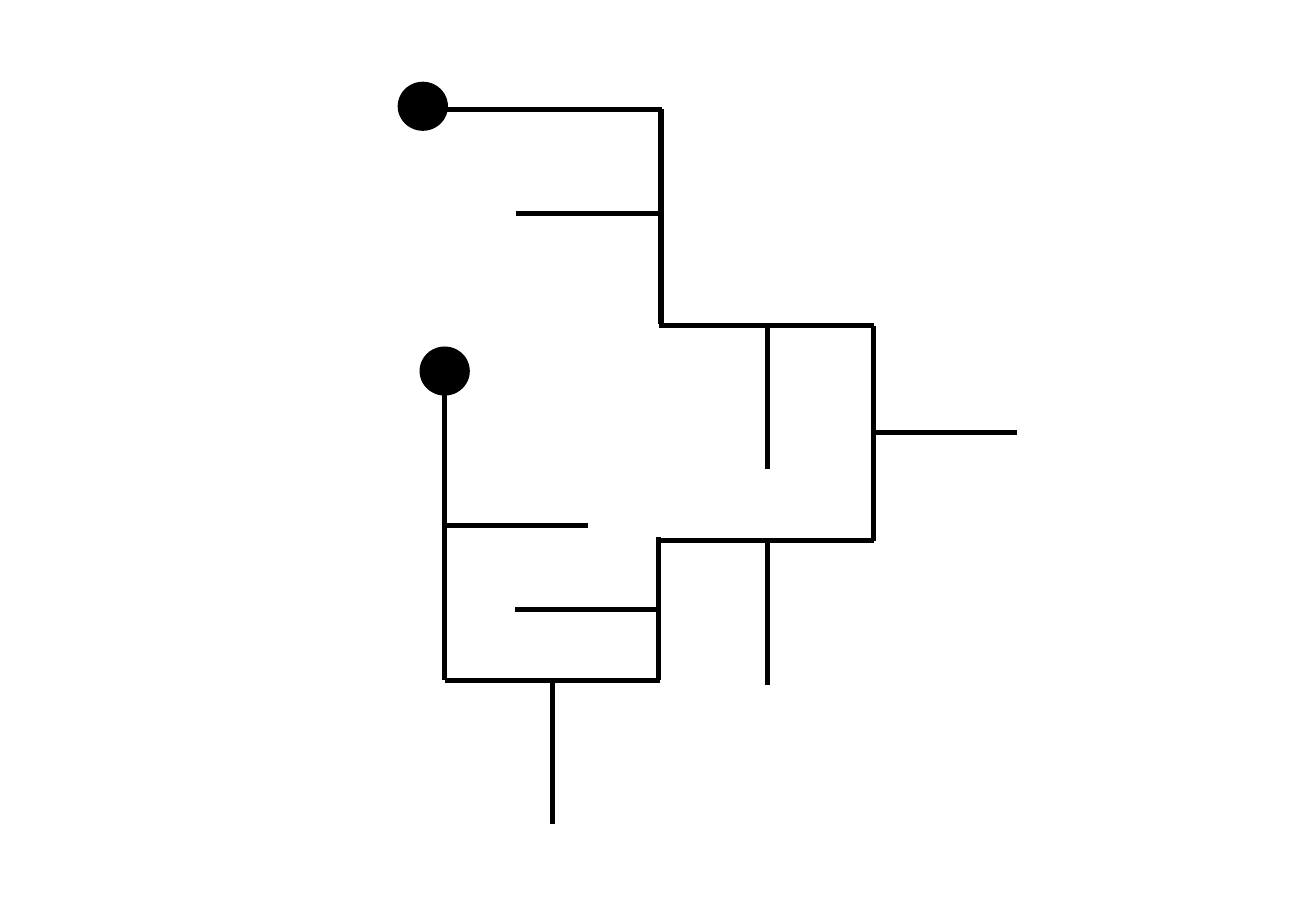
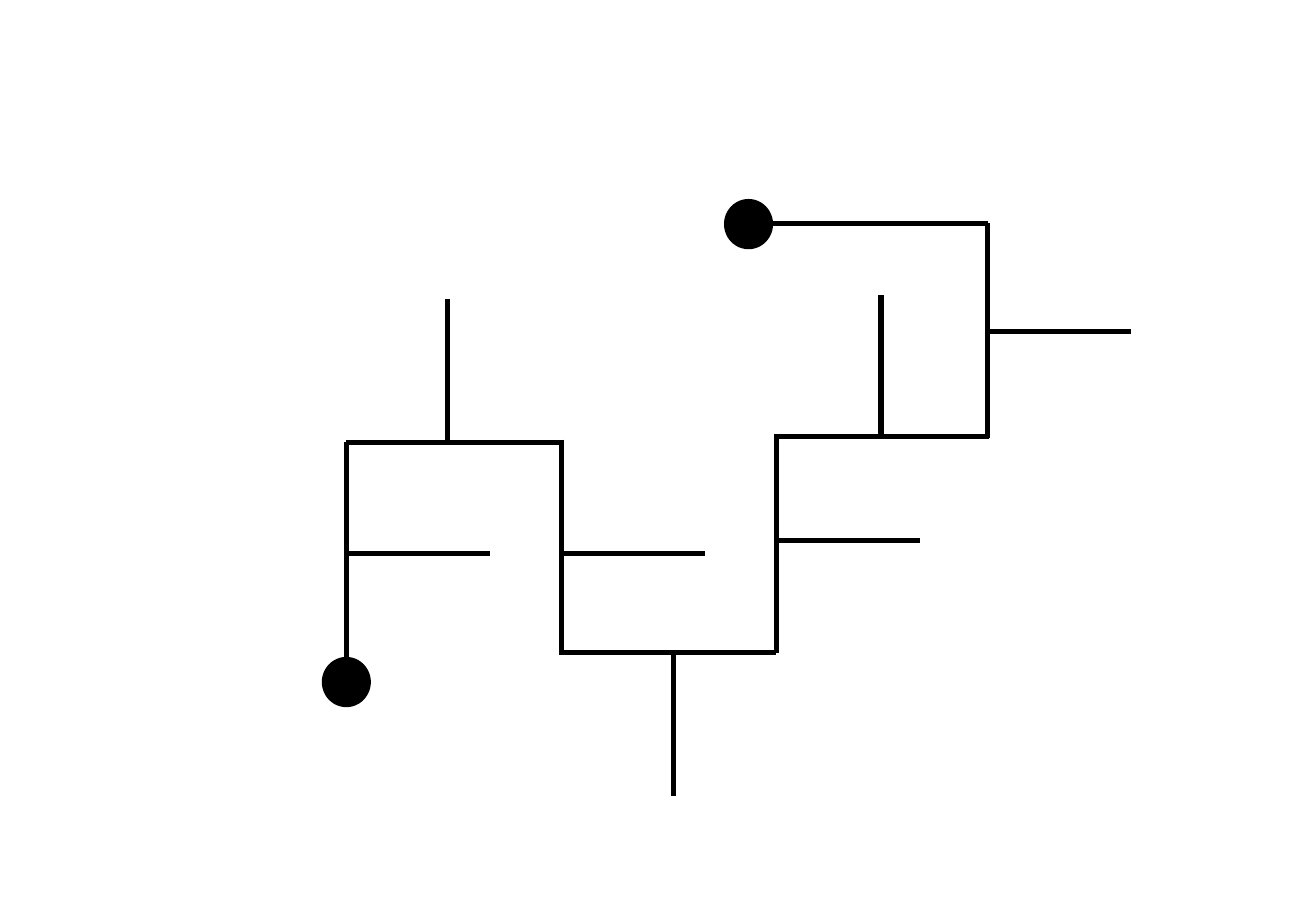
"""Build two slides of branching line figures that end in round dots."""
import pptx
import pptx.dml.color
import pptx.enum.shapes
import pptx.oxml
import pptx.util

Inches = pptx.util.Inches
BLACK = "000000"
DOT = (0.4, 0.39)
STUB = 1.18
WALL = 1.5 * STUB
LONG = 2 * STUB

FIGURES = [
    {
        "turn": 0,
        "dots": [(3.28, 0.68), (3.46, 2.86)],
        "across": {
            WALL: [(3.68, 0.9), (5.42, 2.68), (5.42, 4.45), (3.66, 5.6)],
            STUB: [(4.25, 1.76), (7.19, 3.56), (3.66, 4.33), (4.24, 5.02)],
        },
        "down": {
            WALL: [(5.44, 0.9), (7.19, 2.68)],
            STUB: [(6.32, 2.68), (6.32, 4.46), (5.42, 4.42), (4.55, 5.6)],
            LONG: [(3.66, 3.24)],
        },
    },
    {
        "turn": 270,
        "dots": [(2.65, 5.42), (5.96, 1.65)],
        "across": {
            WALL: [(6.36, 1.84), (6.37, 3.59), (2.85, 3.64), (4.62, 5.37)],
            STUB: [(8.13, 2.73), (6.39, 4.45), (2.85, 4.56), (4.62, 4.56)],
        },
        "down": {
            WALL: [(8.13, 1.84), (6.39, 3.61), (4.62, 3.62), (2.85, 3.64)],
            STUB: [(7.25, 2.43), (3.68, 2.46), (5.54, 5.37)],
        },
    },
]


def color(code):
    return pptx.dml.color.RGBColor.from_string(code)


def stroke(item, width):
    item.line.color.rgb = color(BLACK)
    item.line.width = pptx.util.Pt(width)


def add_dot(group, left, top, turn):
    kind = pptx.enum.shapes.MSO_SHAPE.FLOWCHART_CONNECTOR
    dot = group.shapes.add_shape(kind, *map(Inches, (left, top, *DOT)))
    dot.rotation = turn
    dot.shadow.inherit = False
    dot.fill.solid()
    dot.fill.fore_color.rgb = color(BLACK)
    stroke(dot, 1)


def add_line(group, left, top, width, height):
    kind = pptx.enum.shapes.MSO_CONNECTOR.STRAIGHT
    ends = (left, top, left + width, top + height)
    line = group.shapes.add_connector(kind, *map(Inches, ends))
    stroke(line, 3)
    props = line.element.spPr
    props.append(props.makeelement(pptx.oxml.ns.qn("a:effectLst"), {}))


def draw(slide, figure):
    group = slide.shapes.add_group_shape()
    for left, top in figure["dots"]:
        add_dot(group, left, top, figure["turn"])
    for way, (run, drop) in {"across": (1, 0), "down": (0, 1)}.items():
        for size, starts in figure[way].items():
            for left, top in starts:
                add_line(group, left, top, run * size, drop * size)


def main():
    deck = pptx.Presentation()
    deck.slide_width, deck.slide_height = Inches(10.83), Inches(7.5)
    for figure in FIGURES:
        draw(deck.slides.add_slide(deck.slide_layouts[6]), figure)
    deck.save("out.pptx")


if __name__ == "__main__":
    main()
